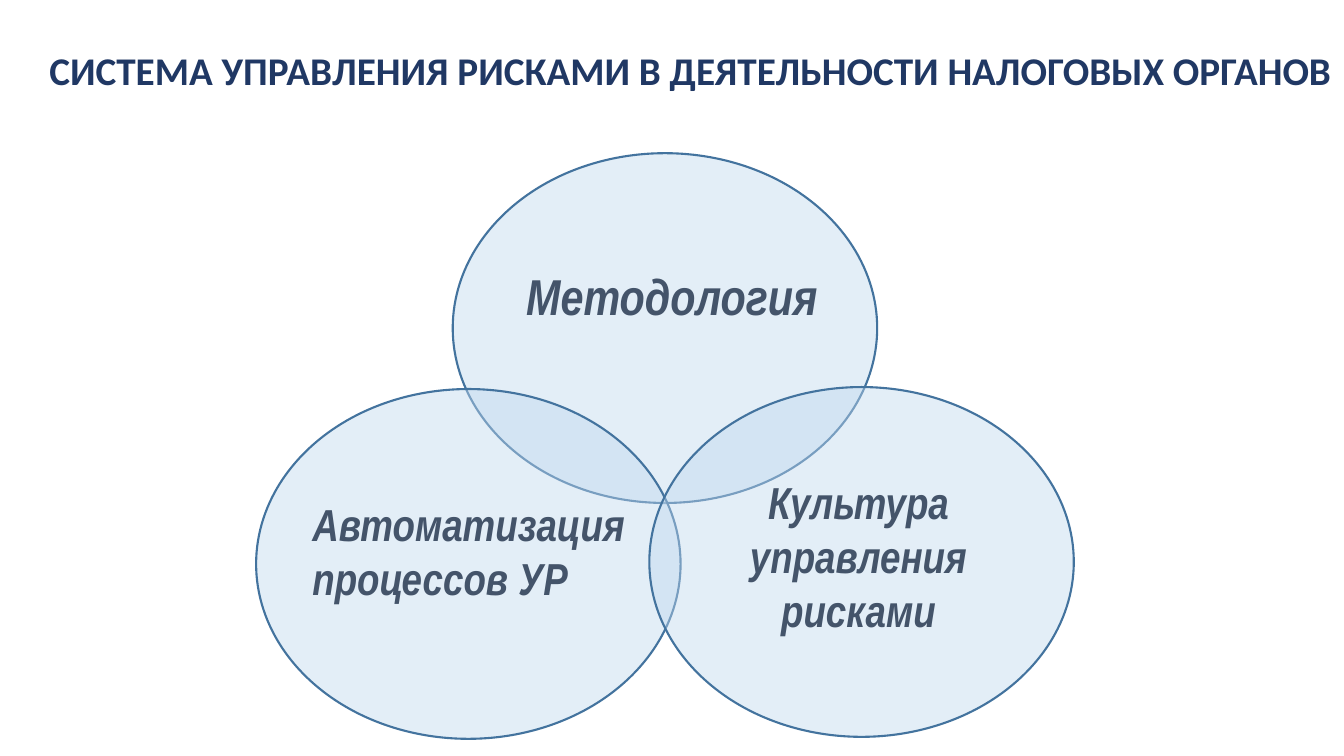
import pptx
import pptx.util
from lxml import etree
from pptx.dml.color import RGBColor
from pptx.enum.shapes import MSO_SHAPE
from pptx.enum.text import MSO_ANCHOR, MSO_AUTO_SIZE, PP_ALIGN
from pptx.oxml.ns import qn
from pptx.util import Inches

COLORS = {"title": "203864", "label": "44546A", "fill": "C0D8EE", "outline": "43739E"}
CIRCLE_WIDTH, CIRCLE_HEIGHT = 4.21, 3.47
FILL_OPACITY = 43


def add_text(slide, box, text, size, font_name, color, alignment, italic=False):
    """Add a wrapping bold text box and return its shape."""
    shape = slide.shapes.add_textbox(*[Inches(length) for length in box])
    text_frame = shape.text_frame
    text_frame.word_wrap = True
    text_frame.text = text
    paragraph = text_frame.paragraphs[0]
    paragraph.alignment = alignment
    font = paragraph.runs[0].font
    font.name = font_name
    font.size = pptx.util.Pt(size)
    font.bold = True
    font.italic = italic
    font.color.rgb = RGBColor.from_string(COLORS[color])
    return shape


presentation = pptx.Presentation()
presentation.slide_width = Inches(13.33)
presentation.slide_height = Inches(7.5)
slide = presentation.slides.add_slide(presentation.slide_layouts[6])

title = add_text(
    slide, (0.36, 0, 12.97, 1.45),
    "СИСТЕМА УПРАВЛЕНИЯ РИСКАМИ В ДЕЯТЕЛЬНОСТИ НАЛОГОВЫХ ОРГАНОВ",
    28, "Calibri", "title", PP_ALIGN.CENTER,
)
title.text_frame.vertical_anchor = MSO_ANCHOR.MIDDLE
title.text_frame.paragraphs[0].line_spacing = 0.9

for left, top in [(4.49, 1.52), (2.54, 3.86), (6.44, 3.84)]:
    circle = slide.shapes.add_shape(
        MSO_SHAPE.OVAL, Inches(left), Inches(top),
        Inches(CIRCLE_WIDTH), Inches(CIRCLE_HEIGHT),
    )
    circle.shadow.inherit = False
    circle.fill.solid()
    circle.fill.fore_color.rgb = RGBColor.from_string(COLORS["fill"])
    fill_color = circle.fill._xPr.find(qn("a:solidFill")).find(qn("a:srgbClr"))
    etree.SubElement(fill_color, qn("a:alpha"), val=str(FILL_OPACITY * 1000))
    circle.line.color.rgb = RGBColor.from_string(COLORS["outline"])
    circle.line.width = pptx.util.Pt(1.5)

labels = [
    ("Методология", (5.12, 2.58, 3.26, 0.71), 36, PP_ALIGN.LEFT),
    ("Автоматизация процессов УР", (3, 4.88, 3.56, 1.18), 32, PP_ALIGN.LEFT),
    ("Культура управления рисками", (6.64, 4.66, 3.75, 1.72), 32, PP_ALIGN.CENTER),
]
for text, box, size, alignment in labels:
    label = add_text(slide, box, text, size, "Arial Narrow", "label", alignment, italic=True)
    label.text_frame.auto_size = MSO_AUTO_SIZE.SHAPE_TO_FIT_TEXT

presentation.save("out.pptx")
